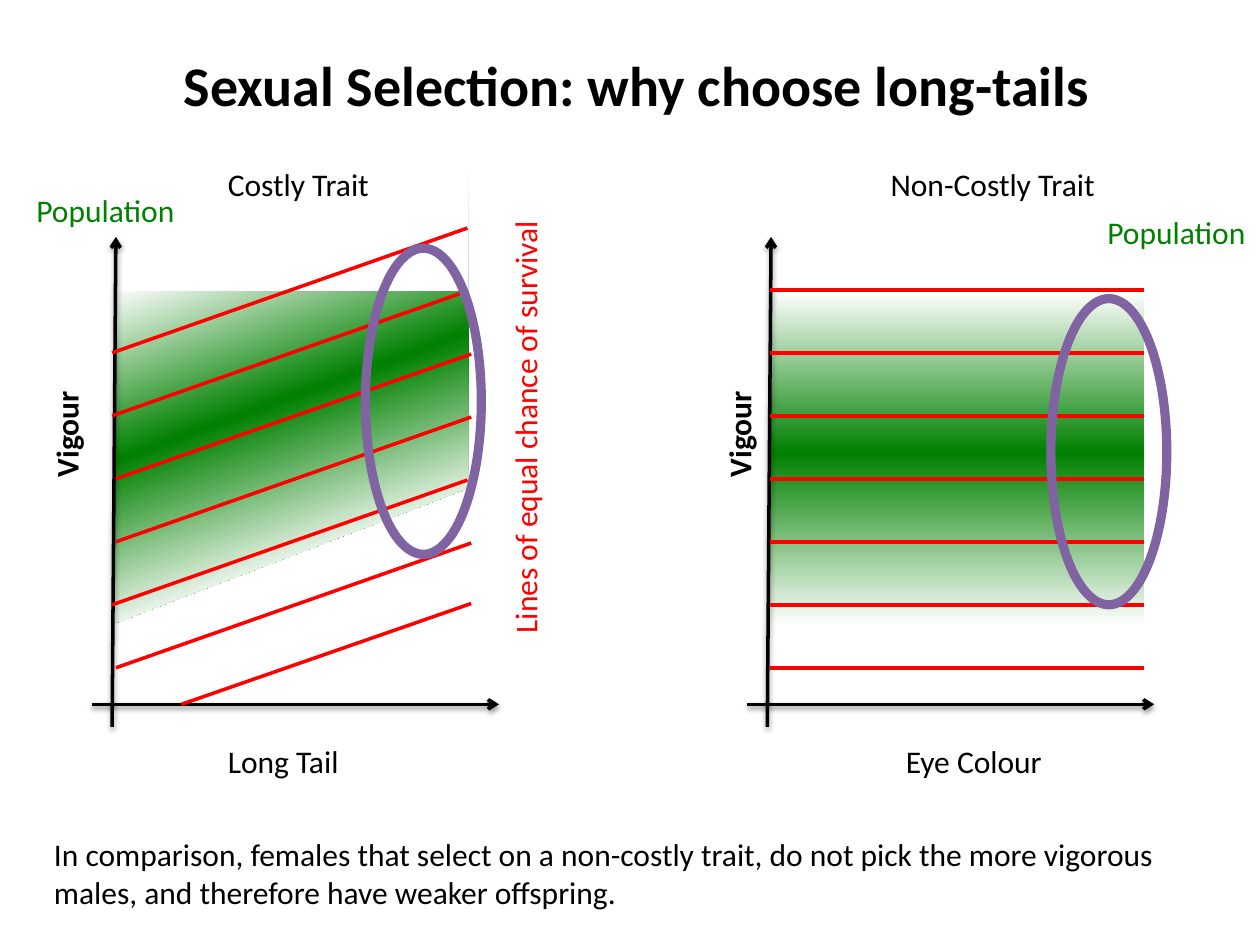
from lxml import etree
from pptx import Presentation
from pptx.dml.color import RGBColor
from pptx.enum.shapes import MSO_CONNECTOR, MSO_SHAPE
from pptx.enum.text import MSO_ANCHOR, MSO_AUTO_SIZE, PP_ALIGN
from pptx.oxml import parse_xml
from pptx.oxml.ns import nsdecls, qn
from pptx.util import Inches, Pt

STRAIGHT = MSO_CONNECTOR.STRAIGHT
BAND, RECTANGLE, OVAL = MSO_SHAPE.PARALLELOGRAM, MSO_SHAPE.RECTANGLE, MSO_SHAPE.OVAL
MIDDLE, NO_FIT = MSO_ANCHOR.MIDDLE, MSO_AUTO_SIZE.NONE
LEFT, CENTER = PP_ALIGN.LEFT, PP_ALIGN.CENTER

THEME = {
    "font": "Calibri", "title": 32, "body": 18, "line": 2, "ring": 5.25,
    "black": "000000", "white": "FFFFFF", "green": "008000",
    "red": "FF0000", "purple": "8064A2",
}

TITLE = ("Sexual Selection: why choose long-tails", (1.02, 0.35, 8.07, 0.64))
LABELS = [
    ("Population", (0.19, 1.47, 1.31, 0.4), "green", False, 0, False),
    ("Population", (8.69, 1.64, 1.31, 0.4), "green", False, 0, False),
    ("Long Tail", (1.71, 5.84, 1.09, 0.4), "black", False, 0, False),
    ("Eye Colour", (7.09, 5.84, 1.29, 0.4), "black", False, 0, False),
    ("Vigour", (0.08, 3.24, 0.89, 0.4), "black", True, 270, False),
    ("Vigour", (5.42, 3.24, 0.89, 0.4), "black", True, 270, False),
    ("In comparison, females that select on a non-costly trait, do not pick the more "
     "vigorous males, and therefore have weaker offspring.",
     (0.33, 6.58, 9.18, 0.71), "black", False, 0, True),
    ("Costly Trait", (1.71, 1.26, 1.34, 0.4), "black", False, 0, False),
    ("Non-Costly Trait", (6.97, 1.26, 1.84, 0.4), "black", False, 0, False),
    ("Lines of equal chance of survival", (2.34, 3.1, 3.65, 0.4), "red", False, 270, True),
]
COSTLY_STOPS = [(7, "white"), (22, "white"), (51, "green"), (81, "white"), (95, "white")]
NEUTRAL_STOPS = [(8, "white"), (50, "green"), (95, "white")]
AXIS_OFFSETS = [0, 5.2]
RINGS = [(2.9, 1.97, 0.92, 2.43), (8.34, 2.37, 0.92, 2.43)]

SURVIVAL_GAP, SURVIVAL_RISE, SURVIVAL_RUN = 0.5, 0.99, 2.82
SLOPED_STARTS = [0.92, 0.89, 0.92, 0.92, 0.89, 0.89]
FLAT_COUNT = 7


def color(name):
    return RGBColor.from_string(THEME[name])


def add_label(page, text, place, tint, bold, turn, wrap):
    box = page.shapes.add_textbox(*map(Inches, place))
    box.rotation = turn
    write(box.text_frame, text, THEME["body"], tint, bold, wrap, LEFT)


def write(frame, text, size, tint, bold, wrap, align):
    frame.word_wrap = wrap
    frame.auto_size = NO_FIT
    para = frame.paragraphs[0]
    para.alignment = align
    span = para.add_run()
    span.text = text
    span.font.name = THEME["font"]
    span.font.size = Pt(size)
    span.font.bold = bold
    span.font.color.rgb = color(tint)


def add_plain(page, kind, place):
    shape = page.shapes.add_shape(kind, *map(Inches, place))
    shape.shadow.inherit = False
    shape.line.fill.background()
    return shape


def fade(shape, stops, angle):
    shape.fill.background()
    marks = "".join(
        f'<a:gs pos="{at * 1000}"><a:srgbClr val="{THEME[tint]}"/></a:gs>' for at, tint in stops)
    gradient = parse_xml(
        f'<a:gradFill {nsdecls("a")} rotWithShape="1"><a:gsLst>{marks}</a:gsLst>'
        f'<a:lin ang="{angle * 60000}" scaled="0"/></a:gradFill>')
    properties = shape.fill._xPr
    properties.replace(properties.find(qn("a:noFill")), gradient)


def add_line(page, start, end, tint):
    line = page.shapes.add_connector(STRAIGHT, *map(Inches, start + end))
    line.line.color.rgb = color(tint)
    line.line.width = Pt(THEME["line"])
    effects = etree.SubElement(line._element.spPr, qn("a:effectLst"))
    return line, effects


def add_axis(page, start, end):
    axis, effects = add_line(page, start, end, "black")
    etree.SubElement(axis.line._get_or_add_ln(), qn("a:tailEnd"), type="arrow")
    effects.append(parse_xml(
        f'<a:outerShdw {nsdecls("a")} blurRad="{Pt(3.1)}" dist="{Pt(1.6)}" dir="5400000" '
        f'rotWithShape="0"><a:srgbClr val="{THEME["black"]}"><a:alpha val="38000"/>'
        '</a:srgbClr></a:outerShdw>'))


def add_populations(page):
    costly = add_plain(page, BAND, (0.47, 1.7, 3.69, 2.8))
    costly.adjustments[0] = 0.382
    costly.rotation = 270
    costly._element.spPr.xfrm.set("flipH", "1")
    fade(costly, COSTLY_STOPS, 20)
    cover = add_plain(page, RECTANGLE, (0.92, 1.26, 2.8, 1.05))
    cover.fill.solid()
    cover.fill.fore_color.rgb = color("white")
    neutral = add_plain(page, RECTANGLE, (6.11, 2.07, 2.97, 3.05))
    fade(neutral, NEUTRAL_STOPS, 90)


def add_survival_lines(page):
    add_line(page, (1.44, 5.59), (3.74, 4.79), "red")
    for index, left in enumerate(SLOPED_STARTS):
        base = 5.3 - index * SURVIVAL_GAP
        add_line(page, (left, base), (left + SURVIVAL_RUN, base - SURVIVAL_RISE), "red")
    for index in range(FLAT_COUNT):
        level = 2.3 + index * SURVIVAL_GAP
        add_line(page, (9.08, level), (6.11, level), "red")


def main():
    deck = Presentation()
    deck.slide_width, deck.slide_height = Inches(10), Inches(7.5)
    page = deck.slides.add_slide(deck.slide_layouts[5])

    text, place = TITLE
    title = page.shapes.title
    title.left, title.top, title.width, title.height = map(Inches, place)
    title.text_frame.vertical_anchor = MIDDLE
    write(title.text_frame, text, THEME["title"], "black", True, True, CENTER)

    add_populations(page)
    for offset in AXIS_OFFSETS:
        add_axis(page, (0.89 + offset, 5.77), (0.92 + offset, 1.88))
        add_axis(page, (0.73 + offset, 5.59), (3.96 + offset, 5.59))
    add_survival_lines(page)
    for label in LABELS:
        add_label(page, *label)
    for place in RINGS:
        ring = add_plain(page, OVAL, place)
        ring.fill.background()
        ring.line.color.rgb = color("purple")
        ring.line.width = Pt(THEME["ring"])

    deck.save("out.pptx")


if __name__ == "__main__":
    main()
